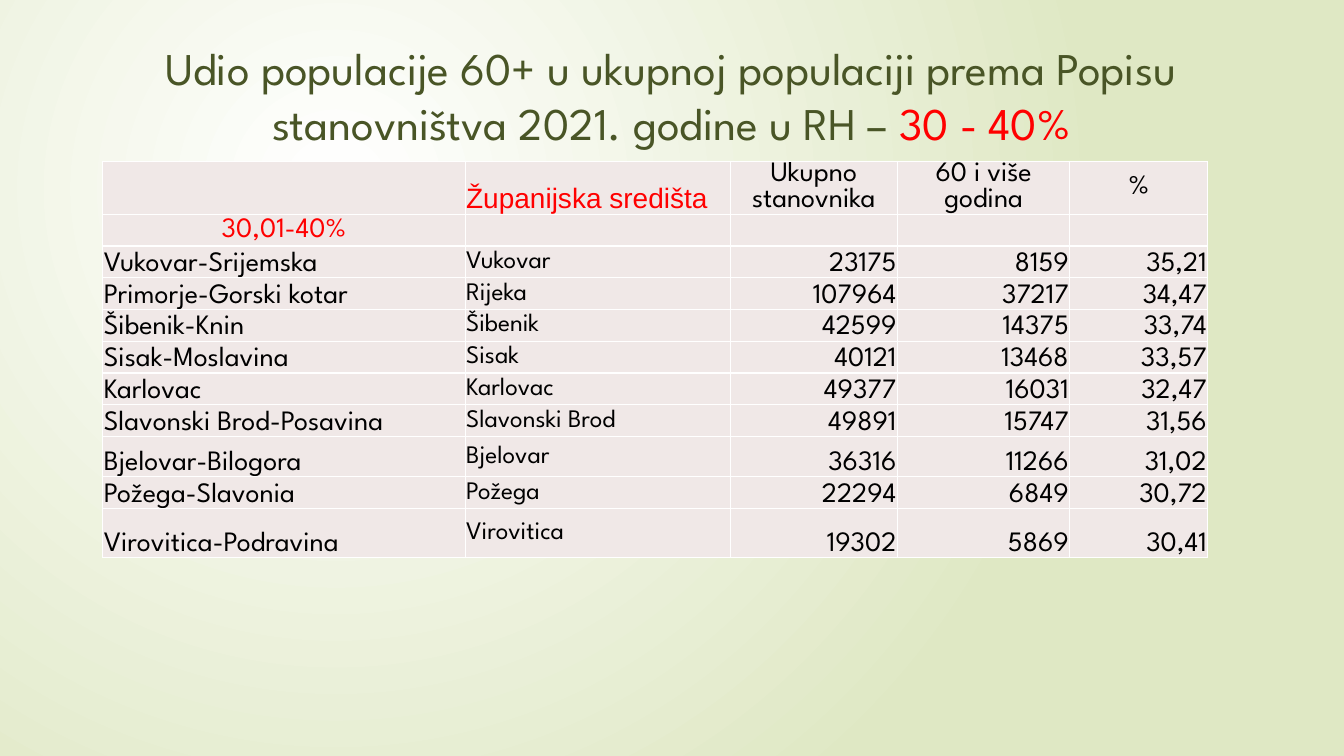
import lxml.etree
import pptx
import pptx.dml.color
import pptx.enum.text
import pptx.oxml
import pptx.oxml.ns
import pptx.util

PX = 4572
COLORS = {
    "white": "FFFFFF",
    "meadow": "DFE8C4",
    "olive": "495526",
    "red": "FF0000",
    "black": "000000",
    "cell": "F0E8E7",
}
FONT = "League Spartan"
ALIGN = pptx.enum.text.PP_ALIGN
ANCHOR = pptx.enum.text.MSO_ANCHOR

COLUMN_WIDTHS = [719, 526, 332, 342, 274]
ROW_HEIGHTS = [105] + [63] * 7 + [80, 63, 97]
HEADINGS = ["", "Županijska središta", "Ukupno stanovnika", "60 i više godina", "%"]
GROUP = ["30,01-40%", "", "", "", ""]
COUNTIES = [
    ["Vukovar-Srijemska", "Vukovar", "23175", "8159", "35,21"],
    ["Primorje-Gorski kotar", "Rijeka", "107964", "37217", "34,47"],
    ["Šibenik-Knin", "Šibenik", "42599", "14375", "33,74"],
    ["Sisak-Moslavina", "Sisak", "40121", "13468", "33,57"],
    ["Karlovac", "Karlovac", "49377", "16031", "32,47"],
    ["Slavonski Brod-Posavina", "Slavonski Brod", "49891", "15747", "31,56"],
    ["Bjelovar-Bilogora", "Bjelovar", "36316", "11266", "31,02"],
    ["Požega-Slavonia", "Požega", "22294", "6849", "30,72"],
    ["Virovitica-Podravina", "Virovitica", "19302", "5869", "30,41"],
]


def px(length):
    return pptx.util.Emu(length * PX)


def rgb(name):
    return pptx.dml.color.RGBColor.from_string(COLORS[name])


def style_font(font, size, color, name=FONT):
    font.name = name
    font.size = pptx.util.Pt(size)
    font.color.rgb = rgb(color)


def paint_background(page):
    fill = page.background.fill
    fill.gradient()
    for stop, color in zip(fill.gradient_stops, ["white", "meadow"]):
        stop.color.rgb = rgb(color)
    qn = pptx.oxml.ns.qn
    linear = next(page.background._cSld.iter(qn("a:lin")))
    circle = pptx.oxml.parse_xml(
        f'<a:path {pptx.oxml.ns.nsdecls("a")} path="circle">'
        '<a:fillToRect l="50000" t="50000" r="100000" b="100000"/></a:path>'
    )
    linear.getparent().replace(linear, circle)


def add_title(page, left, top, width, height):
    title = page.shapes.title
    title.left, title.top, title.width, title.height = map(px, (left, top, width, height))
    frame = title.text_frame
    frame.word_wrap = True
    frame.auto_size = pptx.enum.text.MSO_AUTO_SIZE.NONE
    frame.vertical_anchor = ANCHOR.TOP
    para = frame.paragraphs[0]
    para.alignment = ALIGN.CENTER
    para.line_spacing = pptx.util.Pt(39.3)
    for text, color in [
        ("Udio populacije 60+ u ukupnoj populaciji prema Popisu "
         "stanovništva 2021. godine u RH – ", "olive"),
        ("30 - 40%", "red"),
    ]:
        span = para.add_run()
        span.text = text
        style_font(span.font, 32.4, color)


def add_borders(cell):
    properties = cell._tc.get_or_add_tcPr()
    for side in "LRTB":
        properties.append(pptx.oxml.parse_xml(
            f'<a:ln{side} {pptx.oxml.ns.nsdecls("a")} w="12700"><a:solidFill>'
            f'<a:srgbClr val="{COLORS["white"]}"/></a:solidFill></a:ln{side}>'
        ))


def fill_cell(cell, text, size, color, align, anchor, name=FONT):
    add_borders(cell)
    cell.fill.solid()
    cell.fill.fore_color.rgb = rgb("cell")
    cell.margin_left = cell.margin_right = cell.margin_top = px(2)
    cell.margin_bottom = 0
    cell.vertical_anchor = anchor
    cell.text = text
    para = cell.text_frame.paragraphs[0]
    para.alignment = align
    style_font(para.font, size, color, name)


def add_county_table(page, left, top):
    rows = [HEADINGS, GROUP] + COUNTIES
    table = page.shapes.add_table(
        len(rows), len(HEADINGS), px(left), px(top),
        px(sum(COLUMN_WIDTHS)), px(sum(ROW_HEIGHTS)),
    ).table
    table.first_row = table.horz_banding = False
    for column, width in zip(table.columns, COLUMN_WIDTHS):
        column.width = px(width)
    for row, height in zip(table.rows, ROW_HEIGHTS):
        row.height = px(height)

    heading = (20, "black", ALIGN.CENTER, ANCHOR.MIDDLE)
    seat_heading = (20, "red", ALIGN.LEFT, ANCHOR.BOTTOM, "Arial")
    group = (20, "red", ALIGN.CENTER, ANCHOR.MIDDLE)
    county = (20, "black", ALIGN.LEFT, ANCHOR.BOTTOM)
    seat = (18, "black", ALIGN.LEFT, ANCHOR.MIDDLE)
    number = (20, "black", ALIGN.RIGHT, ANCHOR.BOTTOM)
    styles = [[heading, seat_heading] + [heading] * 3, [group] * 5]
    styles += [[county, seat] + [number] * 3] * len(COUNTIES)
    for r, (texts, looks) in enumerate(zip(rows, styles)):
        for c, (text, look) in enumerate(zip(texts, looks)):
            fill_cell(table.cell(r, c), text, *look)


def main():
    deck = pptx.Presentation()
    deck.slide_width, deck.slide_height = px(2667), px(1500)
    page = deck.slides.add_slide(deck.slide_layouts.get_by_name("Title Only"))
    paint_background(page)
    add_county_table(page, 204, 320)
    add_title(page, 104, 68, 2456, 280)
    deck.save("out.pptx")


if __name__ == "__main__":
    main()
